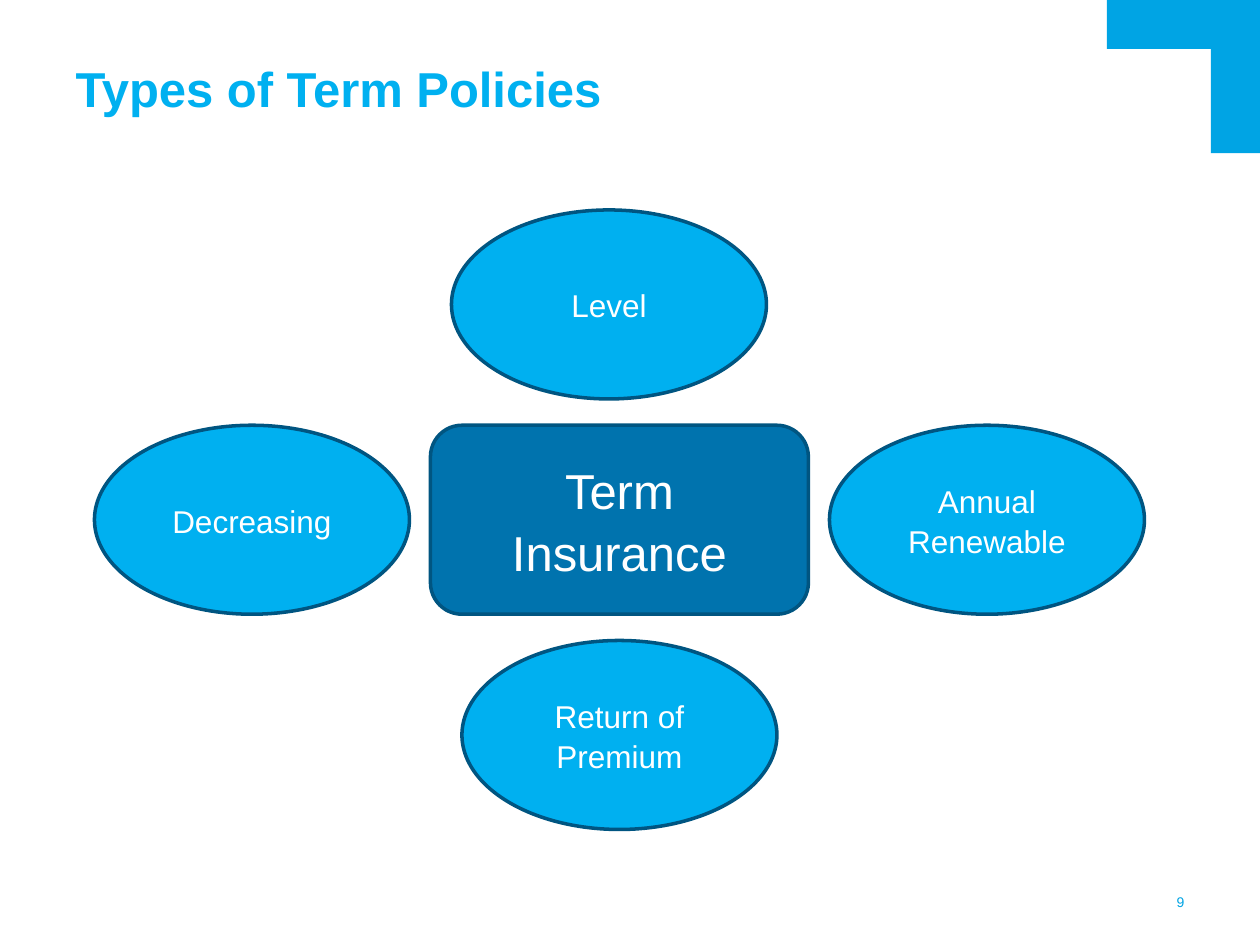
from pptx import Presentation
from pptx.dml.color import RGBColor
from pptx.enum.shapes import MSO_SHAPE as Preset
from pptx.enum.text import MSO_ANCHOR as Anchor, MSO_AUTO_SIZE as AutoSize, PP_ALIGN as Align
from pptx.util import Pt

WIDTH, HEIGHT = 720, 540
SKY, CORNER, DEEP, EDGE, WHITE = "00B0F0", "00A4E4", "0073AE", "005581", "FFFFFF"

TITLE = "Types of Term Policies"
CENTRE = "Term Insurance"
PAGE_NUMBER = "9"

# Policy type, left, top
ROW_TOP, OVAL_WIDTH, NODE_HEIGHT, CENTRE_WIDTH = 243, 180, 108, 216
POLICIES = [
    ("Level", 258, 120),
    ("Annual Renewable", 474, ROW_TOP),
    ("Return of Premium", 264, 366),
    ("Decreasing", 54, ROW_TOP),
]
CORNER_LENGTH, CORNER_THICKNESS = 87.5, 28


def colour(value):
    return RGBColor.from_string(value)


def write(shape, text, size, color, bold=False, align=Align.CENTER,
          anchor=Anchor.MIDDLE, spacing=1.0, inset=None):
    frame = shape.text_frame
    frame.auto_size = AutoSize.NONE
    frame.word_wrap = True
    frame.vertical_anchor = anchor
    if inset is not None:
        frame.margin_left = frame.margin_right = Pt(inset)
        frame.margin_top = frame.margin_bottom = Pt(inset)
    para = frame.paragraphs[0]
    para.alignment = align
    para.line_spacing = spacing
    span = para.add_run()
    span.text = text
    span.font.name = "Arial"
    span.font.size = Pt(size)
    span.font.bold = bold
    span.font.color.rgb = colour(color)


def add_filled(page, preset, left, top, width, height, fill, line=None):
    shape = page.shapes.add_shape(preset, Pt(left), Pt(top), Pt(width), Pt(height))
    shape.shadow.inherit = False
    shape.fill.solid()
    shape.fill.fore_color.rgb = colour(fill)
    if line:
        shape.line.color.rgb = colour(line)
        shape.line.width = Pt(2)
    else:
        shape.line.fill.background()
    return shape


def main():
    deck = Presentation()
    deck.slide_width, deck.slide_height = Pt(WIDTH), Pt(HEIGHT)
    page = deck.slides.add_slide(deck.slide_layouts[5])

    for width, height in [(CORNER_LENGTH, CORNER_THICKNESS),
                          (CORNER_THICKNESS, CORNER_LENGTH)]:
        add_filled(page, Preset.RECTANGLE, WIDTH - width, 0, width, height, CORNER)

    title = page.shapes.title
    title.left, title.top, title.width, title.height = Pt(43.2), Pt(43.2), Pt(633.6), Pt(24.5)
    write(title, TITLE, 28, SKY, bold=True, align=Align.LEFT,
          anchor=Anchor.BOTTOM, spacing=0.9, inset=0)

    for name, left, top in POLICIES:
        oval = add_filled(page, Preset.OVAL, left, top, OVAL_WIDTH, NODE_HEIGHT, SKY, EDGE)
        write(oval, name, 18, WHITE, spacing=1.05)

    centre = add_filled(page, Preset.ROUNDED_RECTANGLE, 246, ROW_TOP,
                        CENTRE_WIDTH, NODE_HEIGHT, DEEP, EDGE)
    write(centre, CENTRE, 28, WHITE, spacing=1.05)

    number = page.shapes.add_textbox(Pt(654.5), Pt(510.5), Pt(22.3), Pt(10))
    write(number, PAGE_NUMBER, 8, CORNER, align=Align.RIGHT, inset=0)

    deck.save("out.pptx")


if __name__ == "__main__":
    main()
